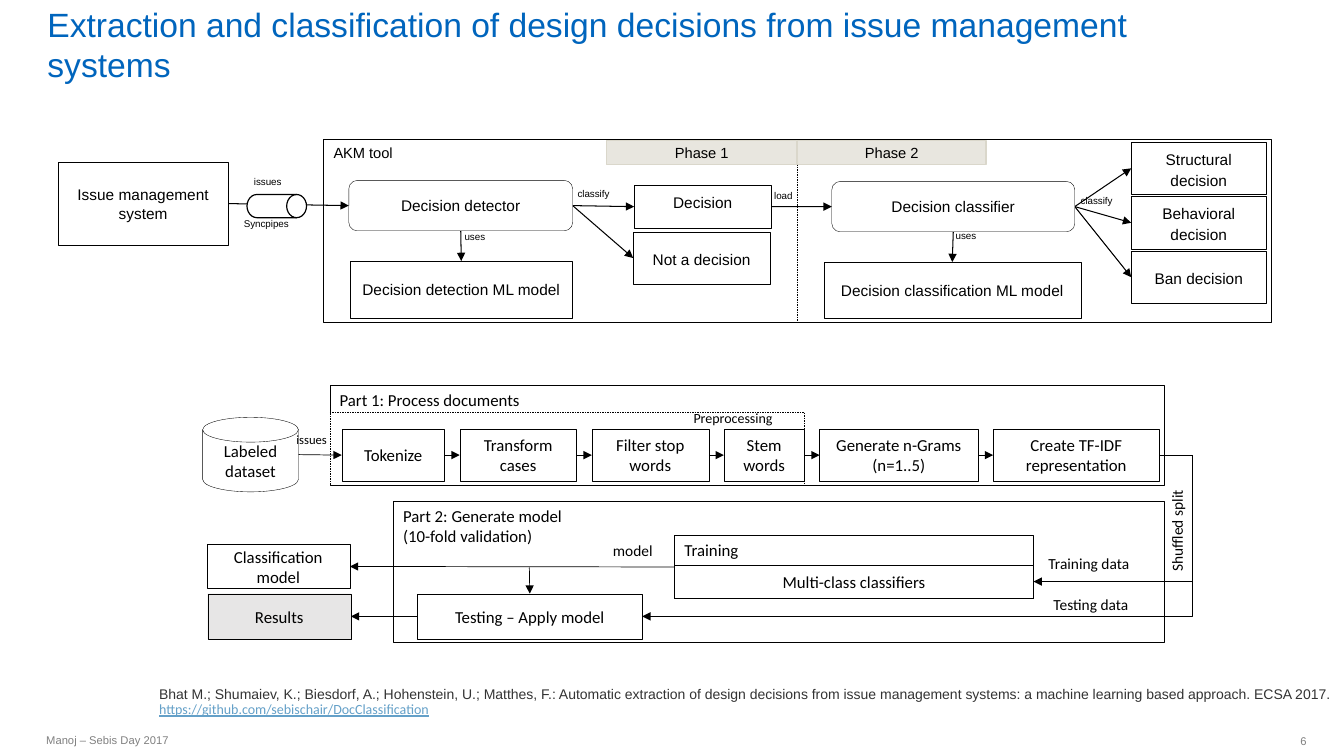
import pptx
import pptx.util
import pptx.dml.color
import pptx.enum.dml
import pptx.enum.shapes
import pptx.enum.text
import pptx.oxml
import pptx.oxml.ns
import lxml.etree

RGB = pptx.dml.color.RGBColor
BLACK = RGB(0, 0, 0)
WHITE = RGB(255, 255, 255)
BLUE = RGB(0x00, 0x65, 0xBD)
LINK = RGB(0x64, 0xA0, 0xC8)
GREY = RGB(0x80, 0x80, 0x80)
DARK = RGB(0x33, 0x33, 0x33)
RESULT = RGB(0xE7, 0xE6, 0xE6)
PHASE = RGB(0xE8, 0xE6, 0xDF)
PHASE_EDGE = RGB(0xDA, 0xD7, 0xCB)

KIND = pptx.enum.shapes.MSO_SHAPE
LINE = pptx.enum.shapes.MSO_CONNECTOR
ALIGN = pptx.enum.text.PP_ALIGN
ANCHOR = pptx.enum.text.MSO_ANCHOR
FIT = pptx.enum.text.MSO_AUTO_SIZE
DASH = pptx.enum.dml.MSO_LINE.DASH
Inches = pptx.util.Inches

TITLE = "Extraction and classification of design decisions from issue management systems"
TITLE_AREA = (0.37, 0.05, 11.58, 0.79)

ARIAL = {"name": "Arial", "size": 11, "color": BLACK}
CALIBRI = {"name": "Calibri", "size": 12, "color": BLACK}
HEADING = {**ARIAL, "size": 10.5}
TINY = {**ARIAL, "size": 7}
NOTE = {**CALIBRI, "size": 11}
FOOTER = {**ARIAL, "size": 8, "color": GREY}

STEP_LEFT, STEP_TOP, STEP_HEIGHT, STEP_GAP = 3.39, 4.26, 0.51, 0.15
STEPS = [("Tokenize", 1.02), ("Transform cases", 1.16), ("Filter stop words", 1.16),
         ("Stem words", 0.80), ("Generate n-Grams (n=1..5)", 1.57),
         ("Create TF-IDF representation", 1.65)]
OUTCOMES = ["Structural decision", "Behavioral decision", "Ban decision"]
OUTCOME_LEFT, OUTCOME_TOP, OUTCOME_PITCH = 11.22, 1.41, 0.54
BEND = 11.83
DIVIDER = 7.91

FRAMES = [
    ("AKM tool", (3.21, 1.38, 9.4, 1.82), HEADING, {}),
    ("Part 1: Process documents", (3.27, 3.82, 8.28, 0.99), CALIBRI, {}),
    ("", (3.27, 4.09, 4.71, 0.72), CALIBRI, {"dash": DASH}),
    ("Part 2: Generate model\n(10-fold validation)", (3.9, 4.97, 7.65, 1.4), CALIBRI, {}),
    ("Training", (6.69, 5.31, 3.56, 0.63), CALIBRI, {}),
]
BOXES = [
    ("Issue management system", (0.58, 1.61, 1.68, 0.82), ARIAL, {}),
    ("Decision detector", (3.46, 1.79, 2.22, 0.5), ARIAL, {"kind": KIND.ROUNDED_RECTANGLE}),
    ("Decision", (6.29, 1.84, 1.36, 0.42), ARIAL, {"anchor": ANCHOR.TOP, "spacing": 1.14}),
    ("Not a decision", (6.28, 2.3, 1.36, 0.52), ARIAL, {"spacing": 1.14}),
    ("Decision classifier", (8.25, 1.8, 2.41, 0.5), ARIAL, {"kind": KIND.ROUNDED_RECTANGLE}),
    ("Decision detection ML model", (3.47, 2.59, 2.21, 0.57), ARIAL, {}),
    ("Decision classification ML model", (8.17, 2.6, 2.55, 0.56), ARIAL, {}),
    ("", (2.45, 1.93, 0.59, 0.23), ARIAL,
     {"kind": KIND.FLOWCHART_DIRECT_ACCESS_STORAGE, "weight": 0.85}),
    ("Phase 1", (6.02, 1.39, 1.88, 0.24), HEADING,
     {"fill": PHASE, "edge": PHASE_EDGE, "weight": 0.75}),
    ("Phase 2", (DIVIDER, 1.39, 1.87, 0.24), HEADING,
     {"fill": PHASE, "edge": PHASE_EDGE, "weight": 0.75}),
    ("Labeled dataset", (2.01, 4.14, 0.95, 0.74), CALIBRI, {"kind": KIND.FLOWCHART_MAGNETIC_DISK}),
    ("Multi-class classifiers", (6.69, 5.61, 3.56, 0.32), CALIBRI, {}),
    ("Testing – Apply model", (4.14, 5.89, 2.23, 0.45), CALIBRI, {}),
    ("Classification model", (2.05, 5.4, 1.42, 0.44), CALIBRI, {}),
    ("Results", (2.06, 5.89, 1.42, 0.45), CALIBRI, {"fill": RESULT}),
]
TOOL_ARROWS = [
    ("Issue management system", "right", "Decision detector", "left"),
    ("Decision detector", "right", "Decision", "left"),
    ("Decision detector", "right", "Not a decision", "left"),
    ("Decision detector", "bottom", "Decision detection ML model", "top"),
    ("Decision", "right", "Decision classifier", "left"),
    ("Decision classifier", "bottom", "Decision classification ML model", "top"),
] + [("Decision classifier", "right", outcome, "left") for outcome in OUTCOMES]
CHAIN = ["Labeled dataset"] + [name for name, width in STEPS]
PIPELINE_ARROWS = [(a, "right", b, "left") for a, b in zip(CHAIN, CHAIN[1:])] + [
    ("Training", "left", "Classification model", "right"),
    ("Testing – Apply model", "left", "Results", "right"),
]
SPLIT_TARGETS = ["Multi-class classifiers", "Testing – Apply model"]

LABELS = [
    ("issues", (2.42, 1.69, 0.59, 0.26), TINY, {}),
    ("Syncpipes", (2.32, 2.11, 0.8, 0.26), TINY, {}),
    ("uses", (4.51, 2.24, 0.5, 0.26), TINY, {}),
    ("uses", (9.38, 2.23, 0.5, 0.26), TINY, {}),
    ("load", (7.58, 1.83, 0.47, 0.26), TINY, {}),
    ("classify", (5.63, 1.81, 0.64, 0.26), TINY, {}),
    ("classify", (10.62, 1.88, 0.64, 0.26), TINY, {}),
    ("issues", (2.84, 4.24, 0.62, 0.3), {**CALIBRI, "size": 9}, {}),
    ("Preprocessing", (6.78, 4.01, 1.22, 0.32), {**CALIBRI, "size": 10}, {}),
    ("model", (5.98, 5.32, 0.73, 0.34), NOTE, {}),
    ("Training data", (10.3, 5.45, 1.25, 0.34), NOTE, {}),
    ("Testing data", (10.35, 5.86, 1.18, 0.34), NOTE, {}),
    ("Shuffled split", (11.1, 4.99, 1.21, 0.35), NOTE, {"rotation": 270}),
    ("https://github.com/sebischair/DocClassification", (1.48, 6.9, 2.9, 0.27),
     {**CALIBRI, "size": 10, "color": LINK, "underline": True}, {}),
    ("Bhat M.; Shumaiev, K.; Biesdorf, A.; Hohenstein, U.; Matthes, F.: Automatic extraction of "
     "design decisions from issue management systems: a machine learning based approach. ECSA 2017.",
     (1.48, 6.75, 11.83, 0.27), {**ARIAL, "size": 10, "color": DARK}, {}),
    ("Manoj – Sebis Day 2017", (0.36, 7.18, 6.3, 0.32), FOOTER,
     {"anchor": ANCHOR.MIDDLE, "wrap": True}),
    ("6", (12.6, 7.19, 0.36, 0.32), FOOTER,
     {"anchor": ANCHOR.MIDDLE, "align": ALIGN.RIGHT, "right": 0}),
]


def write(shape, text, style, align=ALIGN.LEFT, spacing=None):
    frame = shape.text_frame
    frame.text = text
    for para in frame.paragraphs:
        para.alignment = align
        para.line_spacing = spacing
        for span in para.runs:
            for key, value in style.items():
                if key == "color":
                    span.font.color.rgb = value
                else:
                    setattr(span.font, key, pptx.util.Pt(value) if key == "size" else value)


def add_box(page, text, area, style, look, align=ALIGN.CENTER, anchor=ANCHOR.MIDDLE):
    box = page.shapes.add_shape(look.get("kind", KIND.RECTANGLE), *map(Inches, area))
    box.shadow.inherit = False
    box.fill.solid()
    box.fill.fore_color.rgb = look.get("fill", WHITE)
    box.line.color.rgb = look.get("edge", BLACK)
    box.line.width = pptx.util.Pt(look.get("weight", 0.25))
    if "dash" in look:
        box.line.dash_style = look["dash"]
    box.text_frame.word_wrap = True
    box.text_frame.vertical_anchor = look.get("anchor", anchor)
    write(box, text, style, align, look.get("spacing"))


def add_label(page, text, area, style, look):
    box = page.shapes.add_textbox(*map(Inches, area))
    box.rotation = look.get("rotation", 0)
    frame = box.text_frame
    settings = {"word_wrap": look.get("wrap", False),
                "auto_size": FIT.NONE if "anchor" in look else FIT.SHAPE_TO_FIT_TEXT,
                "vertical_anchor": look.get("anchor", ANCHOR.TOP),
                "margin_right": Inches(look.get("right", 0.1))}
    for key, value in settings.items():
        setattr(frame, key, value)
    write(box, text, style, look.get("align", ALIGN.LEFT))


def add_line(page, start, end, weight, arrow=True, kind=LINE.STRAIGHT):
    line = page.shapes.add_connector(kind, *map(Inches, start + end))
    line.line.color.rgb = BLACK
    line.line.width = pptx.util.Pt(weight)
    qn = pptx.oxml.ns.qn
    if arrow:
        lxml.etree.SubElement(line.line._get_or_add_ln(), qn("a:tailEnd"), type="triangle")
    lxml.etree.SubElement(line._element.spPr, qn("a:effectLst"))
    return line


def side(area, name):
    left, top, width, height = area
    across, down = {"left": (0, 0.5), "right": (1, 0.5), "top": (0.5, 0), "bottom": (0.5, 1)}[name]
    return left + across * width, top + down * height


def main():
    deck = pptx.Presentation()
    deck.slide_width, deck.slide_height = Inches(13.33), Inches(7.5)
    page = deck.slides.add_slide(deck.slide_layouts[5])

    title = page.shapes.title
    title.left, title.top, title.width, title.height = map(Inches, TITLE_AREA)
    settings = {"margin_top": 0, "margin_bottom": 0, "word_wrap": True,
                "auto_size": FIT.NONE, "vertical_anchor": ANCHOR.BOTTOM}
    for key, value in settings.items():
        setattr(title.text_frame, key, value)
    write(title, TITLE, {"name": "Arial", "size": 24, "color": BLUE})

    boxes = list(BOXES)
    left = STEP_LEFT
    for name, width in STEPS:
        boxes.append((name, (left, STEP_TOP, width, STEP_HEIGHT), CALIBRI, {}))
        left += width + STEP_GAP
    for row, name in enumerate(OUTCOMES):
        area = (OUTCOME_LEFT, OUTCOME_TOP + row * OUTCOME_PITCH, 1.34, 0.52)
        boxes.append((name, area, ARIAL, {"spacing": 1.14}))
    areas = {name: area for name, area, style, look in FRAMES + boxes}

    for frame in FRAMES:
        add_box(page, *frame, align=ALIGN.LEFT, anchor=ANCHOR.TOP)
    add_line(page, (DIVIDER, 1.38), (DIVIDER, 3.19), 0.25, arrow=False).line.dash_style = DASH
    for arrows, weight in ((TOOL_ARROWS, 0.75), (PIPELINE_ARROWS, 0.5)):
        for source, leaving, target, entering in arrows:
            add_line(page, side(areas[source], leaving), side(areas[target], entering), weight)
    add_line(page, (5.25, 5.63), side(areas["Testing – Apply model"], "top"), 0.5)
    start = side(areas[STEPS[-1][0]], "right")
    for target in SPLIT_TARGETS:
        end = side(areas[target], "right")
        bent = add_line(page, start, end, 0.5, kind=LINE.ELBOW)
        share = round((start[0] - BEND) / (start[0] - end[0]) * 100000)
        guides = bent._element.spPr.prstGeom.get_or_add_avLst()
        lxml.etree.SubElement(guides, pptx.oxml.ns.qn("a:gd"), name="adj1", fmla=f"val {share}")
    for box in boxes:
        add_box(page, *box)
    for label in LABELS:
        add_label(page, *label)
    deck.save("out.pptx")


if __name__ == "__main__":
    main()
